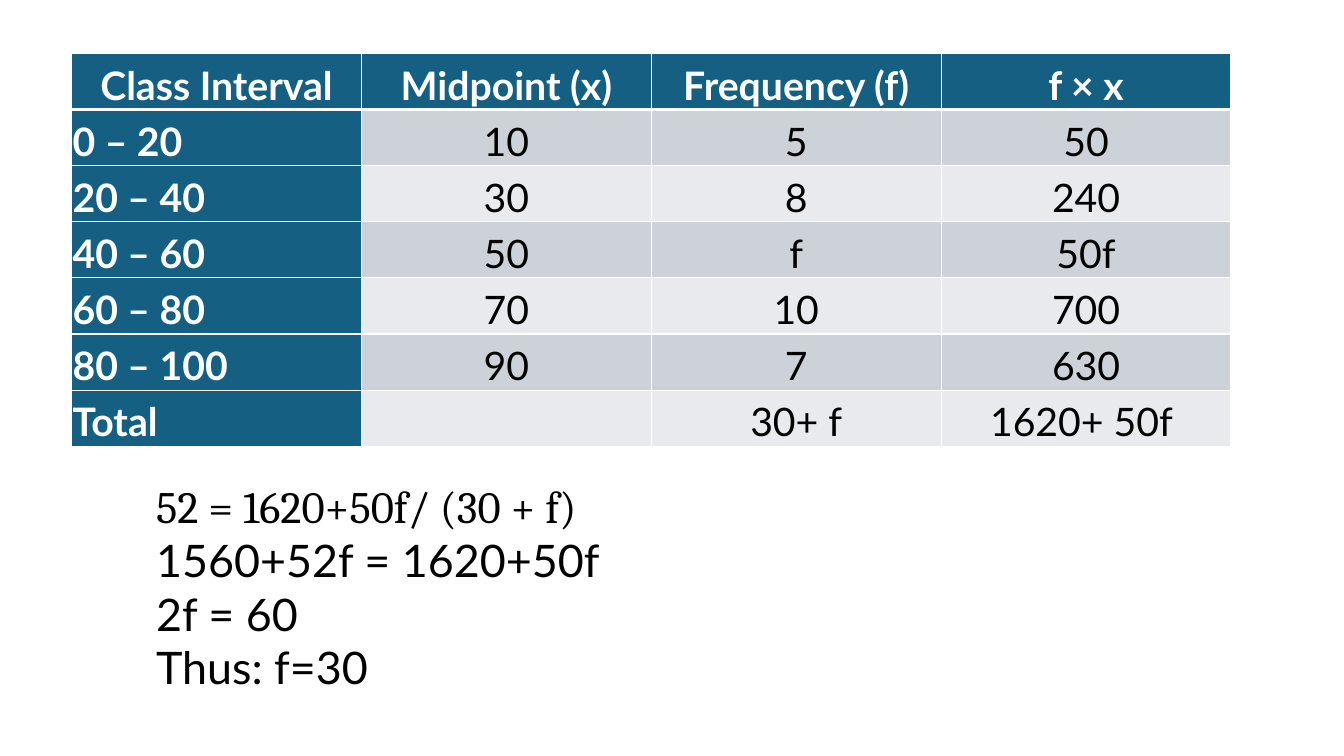
import pptx
import pptx.dml.color
import pptx.enum.text
import pptx.oxml.ns
import pptx.util
from lxml import etree

Inches = pptx.util.Inches
Pt = pptx.util.Pt
RGBColor = pptx.dml.color.RGBColor
Align = pptx.enum.text.PP_ALIGN
Anchor = pptx.enum.text.MSO_ANCHOR

WHITE = RGBColor(0xFF, 0xFF, 0xFF)
BLACK = RGBColor(0x00, 0x00, 0x00)
TEAL = RGBColor(0x15, 0x60, 0x82)
BANDS = (RGBColor(0xCC, 0xD2, 0xD8), RGBColor(0xE8, 0xEA, 0xED))

FREQUENCY_ROWS = [
    ("Class Interval", "Midpoint (x)", "Frequency (f)", "f × x"),
    ("0 – 20", "10", "5", "50"),
    ("20 – 40", "30", "8", "240"),
    ("40 – 60", "50", "f", "50f"),
    ("60 – 80", "70", "10", "700"),
    ("80 – 100", "90", "7", "630"),
    ("Total", "", "30+ f", "1620+ 50f "),
]
SOLUTION_STEPS = [
    ("52 = 1620+50f/ (30 + f)", "Cambria"),
    ("1560+52f = 1620+50f", "Lato"),
    ("2f = 60", "Lato"),
    ("Thus: f=30", "Lato"),
]


class SlideBuilder:
    table_font = "Lato"
    table_size = 28
    cell_margin = Inches(0.01)

    def __init__(self, presentation):
        self.slide = presentation.slides.add_slide(presentation.slide_layouts[6])

    def add_run(self, paragraph, text, font_name, size, color, bold=False):
        run = paragraph.add_run()
        run.text = text
        run.font.name = font_name
        run.font.size = Pt(size)
        run.font.bold = bold
        run.font.color.rgb = color

    def add_borders(self, cell, top, bottom):
        """Draw white cell borders; top and bottom are widths in points."""
        properties = cell._tc.get_or_add_tcPr()
        qn = pptx.oxml.ns.qn
        for tag, width in (("lnL", 1), ("lnR", 1), ("lnT", top), ("lnB", bottom)):
            line = etree.SubElement(properties, qn("a:" + tag), w=str(Pt(width)))
            fill = etree.SubElement(line, qn("a:solidFill"))
            etree.SubElement(fill, qn("a:srgbClr"), val=str(WHITE))

    def fill_cell(self, cell, text, row, column):
        heading = row == 0 or column == 0
        self.add_borders(cell, 3 if row == 1 else 1, 3 if row == 0 else 1)
        cell.fill.solid()
        cell.fill.fore_color.rgb = TEAL if heading else BANDS[(row - 1) % 2]
        cell.vertical_anchor = Anchor.MIDDLE
        cell.margin_left = cell.margin_right = self.cell_margin
        cell.margin_top = cell.margin_bottom = self.cell_margin
        if not text:
            return
        paragraph = cell.text_frame.paragraphs[0]
        paragraph.alignment = Align.LEFT if column == 0 and row else Align.CENTER
        paragraph.line_spacing = 1.15
        paragraph.space_after = Pt(10)
        self.add_run(paragraph, text, self.table_font, self.table_size,
                     WHITE if heading else BLACK, heading)

    def add_table(self, rows, left, top, width, row_height):
        table = self.slide.shapes.add_table(
            len(rows), len(rows[0]), Inches(left), Inches(top),
            Inches(width), Inches(row_height * len(rows))).table
        table.first_col = True
        for row, texts in enumerate(rows):
            for column, text in enumerate(texts):
                self.fill_cell(table.cell(row, column), text, row, column)

    def add_text(self, lines, left, top, width, height, size):
        box = self.slide.shapes.add_textbox(
            Inches(left), Inches(top), Inches(width), Inches(height))
        frame = box.text_frame
        frame.word_wrap = True
        frame.auto_size = pptx.enum.text.MSO_AUTO_SIZE.SHAPE_TO_FIT_TEXT
        for index, (text, font_name) in enumerate(lines):
            paragraph = frame.add_paragraph() if index else frame.paragraphs[0]
            self.add_run(paragraph, text, font_name, size, BLACK)


def main():
    presentation = pptx.Presentation()
    presentation.slide_width = Inches(13.33)
    presentation.slide_height = Inches(7.5)
    builder = SlideBuilder(presentation)
    builder.add_table(FREQUENCY_ROWS, 0.71, 0.53, 11.5, 0.38)
    builder.add_text(SOLUTION_STEPS, 1.45, 4.7, 9.77, 2.26, 32)
    presentation.save("out.pptx")


if __name__ == "__main__":
    main()
